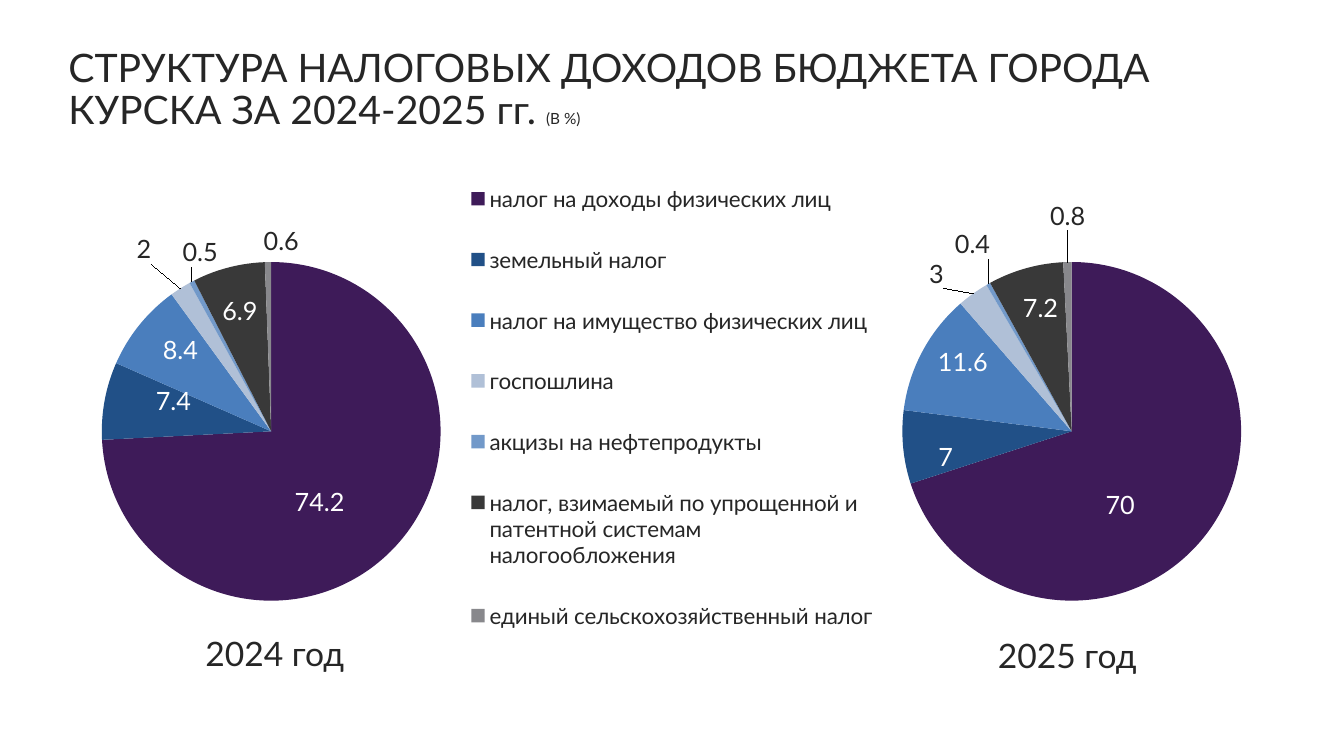
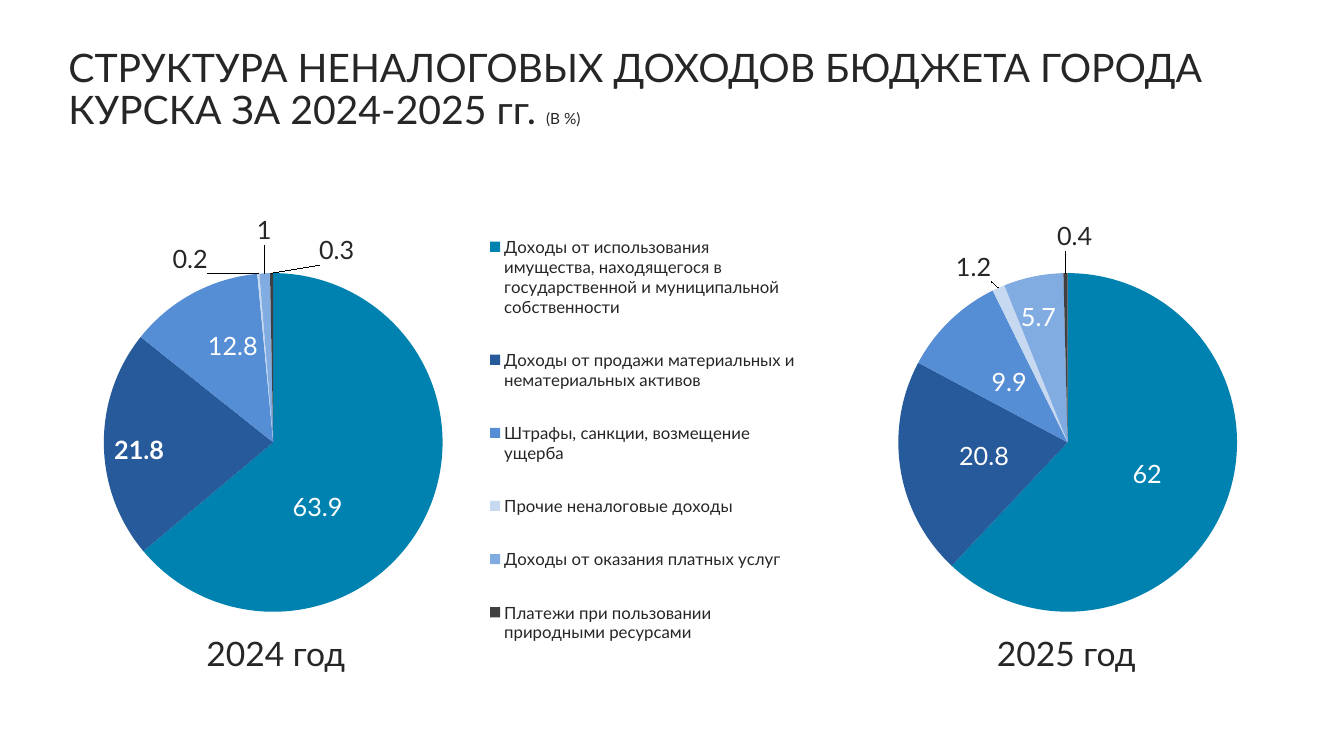
from math import cos, pi, sin

from lxml.etree import SubElement
from pptx import Presentation
from pptx.chart.data import CategoryChartData
from pptx.dml.color import RGBColor
from pptx.enum.chart import XL_CHART_TYPE, XL_LABEL_POSITION, XL_LEGEND_POSITION
from pptx.enum.text import PP_ALIGN
from pptx.oxml.ns import qn
from pptx.oxml.xmlchemy import OxmlElement
from pptx.util import Inches, Pt

FONT = "Lato"
COLORS = {
    "text": "262626", "white": "FFFFFF",
    "purple": "3E1B59", "navy": "215087", "blue": "4A7EBD", "mist": "B0C0D7",
    "sky": "7299C9", "charcoal": "393939", "gray": "88888C",
    "teal": "0082B0", "deep": "265A9A", "azure": "558ED5", "ice": "C6D9F1",
    "light": "81ACE2", "graphite": "404040",
}
PIE_SIZE = 3.36
LABEL_GAP = 0.06
LABEL_HALF_HEIGHT = 0.15
CHARACTER_HALF_WIDTH = 0.06

TAX = {
    "title": "СТРУКТУРА НАЛОГОВЫХ ДОХОДОВ БЮДЖЕТА ГОРОДА КУРСКА ЗА 2024-2025 гг. ",
    "sources": [
        ("налог на доходы физических лиц", "purple"),
        ("земельный налог", "navy"),
        ("налог на имущество физических лиц", "blue"),
        ("госпошлина", "mist"),
        ("акцизы на нефтепродукты", "sky"),
        ("налог, взимаемый по упрощенной и патентной системам налогообложения", "charcoal"),
        ("единый сельскохозяйственный налог", "gray"),
    ],
    "years": [
        {"box": (0.16, 1.5, 8.78, 5.08), "pie": (1.01, 2.6),
         "legend": (4.64, 4.05, 16), "caption": ("2024 год", 1.63, 6.23),
         "shares": [(74.2, 3.17, 4.98), (7.4, 1.72, 3.97), (8.4, 1.79, 3.47),
                    (2, 1.44, 2.47), (0.5, 1.98, 2.5), (6.9, 2.38, 3.08),
                    (0.6, 2.79, 2.39)]},
        {"box": (4.87, 1.06, 8.89, 5.93), "pie": (8.95, 2.6),
         "caption": ("2025 год", 9.49, 6.25),
         "shares": [(70, 11.11, 5.01), (7, 9.38, 4.53), (11.6, 9.55, 3.59),
                    (3, 9.3, 2.71), (0.4, 9.64, 2.42), (7.2, 10.32, 3.05),
                    (0.8, 10.59, 2.14)]},
    ],
}
NON_TAX = {
    "title": "СТРУКТУРА НЕНАЛОГОВЫХ ДОХОДОВ БЮДЖЕТА ГОРОДА КУРСКА ЗА 2024-2025 гг. ",
    "sources": [
        ("Доходы от использования имущества, находящегося в государственной "
         "и муниципальной собственности", "teal"),
        ("Доходы от продажи материальных и нематериальных активов", "deep"),
        ("Штрафы, санкции, возмещение ущерба", "azure"),
        ("Прочие неналоговые доходы", "ice"),
        ("Доходы от оказания платных услуг", "light"),
        ("Платежи при пользовании природными ресурсами", "graphite"),
    ],
    "years": [
        {"box": (0.38, 2.02, 7.75, 4.68), "pie": (1.03, 2.71), "bold": 21.8,
         "legend": (4.84, 3.07, 12), "caption": ("2024 год", 1.64, 6.23),
         "shares": [(63.9, 3.15, 5.03), (21.8, 1.38, 4.46), (12.8, 2.31, 3.43),
                    (0.2, 1.88, 2.57), (1, 2.62, 2.28), (0.3, 3.34, 2.48)]},
        {"box": (7.43, 2.05, 6.11, 4.06), "pie": (8.91, 2.71),
         "caption": ("2025 год", 9.48, 6.23),
         "shares": [(62, 11.38, 4.7), (20.8, 9.76, 4.52), (9.9, 10.01, 3.79),
                    (1.2, 9.65, 2.64), (5.7, 10.3, 3.14), (0.4, 10.66, 2.34)]},
    ],
}


def style_font(font, size, color="text", bold=False):
    """Apply the shared typeface with a size and colour."""
    font.name = FONT
    font.size = Pt(size)
    font.bold = bold
    font.color.rgb = RGBColor.from_string(COLORS[color])


def add_title(slide, heading, box):
    """Place the slide heading with its small unit note."""
    frame = slide.shapes.add_textbox(*map(Inches, box)).text_frame
    frame.word_wrap = True
    paragraph = frame.paragraphs[0]
    paragraph.line_spacing = 0.9
    for wording, size in ((heading, 28), ("(В %)", 11)):
        run = paragraph.add_run()
        run.text = wording
        style_font(run.font, size)


def add_caption(slide, year, left, top):
    """Place the centred year under a pie."""
    frame = slide.shapes.add_textbox(
        Inches(left), Inches(top), Inches(2.19), Inches(0.5)).text_frame
    frame.word_wrap = True
    paragraph = frame.paragraphs[0]
    paragraph.text = year
    paragraph.alignment = PP_ALIGN.CENTER
    style_font(paragraph.runs[0].font, 24)


def manual_layout(**settings):
    """Build a chart layout element from its ordered settings."""
    layout = OxmlElement("c:layout")
    manual = SubElement(layout, qn("c:manualLayout"))
    for tag, value in settings.items():
        SubElement(manual, qn(f"c:{tag}")).set("val", str(value))
    return layout


def frame_layout(chart_box, part_box, **target):
    """Express a box in inches as fractions of the chart box."""
    left, top, width, height = chart_box
    part_left, part_top, part_width, part_height = part_box
    return manual_layout(
        **target, xMode="edge", yMode="edge",
        x=(part_left - left) / width, y=(part_top - top) / height,
        w=part_width / width, h=part_height / height)


def default_label_center(pie, turn, value, outside):
    """Find where a label sits before it is moved."""
    radius = PIE_SIZE / 2
    reach = radius + LABEL_GAP if outside else radius / 2
    x = pie[0] + radius + reach * sin(2 * pi * turn)
    y = pie[1] + radius - reach * cos(2 * pi * turn)
    if outside:
        y -= LABEL_HALF_HEIGHT
        if (1 - turn) * 360 > 5:
            x -= CHARACTER_HALF_WIDTH * len(str(value))
    return x, y


def add_share_labels(series, year):
    """Place each share at its own point inside or outside the pie."""
    series.data_labels.show_value = True
    total = sum(value for value, _, _ in year["shares"])
    _, _, width, height = year["box"]
    passed = 0
    for index, (value, x, y) in enumerate(year["shares"]):
        outside = value < 5
        turn = (passed + value / 2) / total
        passed += value
        start_x, start_y = default_label_center(year["pie"], turn, value, outside)
        label = series.points[index].data_label
        style_font(label.font, 18, "text" if outside else "white",
                   value == year.get("bold"))
        label.position = (XL_LABEL_POSITION.OUTSIDE_END if outside
                          else XL_LABEL_POSITION.CENTER)
        entry = series.data_labels._element.findall(qn("c:dLbl"))[index]
        entry.find(qn("c:idx")).addnext(manual_layout(
            x=(x - start_x) / width, y=(y - start_y) / height))


def add_legend(chart, chart_box, left, width, size):
    """Place the legend over the full height of the chart."""
    chart.has_legend = True
    legend = chart.legend
    legend.position = XL_LEGEND_POSITION.RIGHT
    legend.include_in_layout = False
    style_font(legend.font, size)
    element = legend._element
    for old in element.findall(qn("c:layout")):
        element.remove(old)
    element.find(qn("c:legendPos")).addnext(frame_layout(
        chart_box, (left, chart_box[1], width, chart_box[3])))


def add_pie(slide, sources, year):
    """Place one year's pie with its labels and optional legend."""
    data = CategoryChartData()
    data.categories = ([name for name, _ in sources] if "legend" in year
                       else [str(number + 1) for number in range(len(sources))])
    data.add_series("Series 1", [value for value, _, _ in year["shares"]])
    chart = slide.shapes.add_chart(
        XL_CHART_TYPE.PIE, *map(Inches, year["box"]), data).chart
    chart.has_title = False
    chart.has_legend = False
    style_font(chart.font, 18)
    plot = chart.plots[0]
    plot.vary_by_categories = True
    series = plot.series[0]
    for index, (_, color) in enumerate(sources):
        fill = series.points[index].format.fill
        fill.solid()
        fill.fore_color.rgb = RGBColor.from_string(COLORS[color])
    add_share_labels(series, year)
    plot_area = chart._chartSpace.chart.plotArea
    for old in plot_area.findall(qn("c:layout")):
        plot_area.remove(old)
    plot_area.insert(0, frame_layout(
        year["box"], (*year["pie"], PIE_SIZE, PIE_SIZE), layoutTarget="inner"))
    if "legend" in year:
        add_legend(chart, year["box"], *year["legend"])


def add_income_slide(presentation, content):
    """Build a slide comparing two years of income."""
    slide = presentation.slides.add_slide(presentation.slide_layouts[6])
    add_title(slide, content["title"], (0.58, 0.43, 11.88, 0.76))
    for year in content["years"]:
        add_pie(slide, content["sources"], year)
        add_caption(slide, *year["caption"])


def main():
    """Build and save the presentation."""
    presentation = Presentation()
    presentation.slide_width = Inches(13.33)
    presentation.slide_height = Inches(7.5)
    for income in (TAX, NON_TAX):
        add_income_slide(presentation, income)
    presentation.save("out.pptx")


if __name__ == "__main__":
    main()
